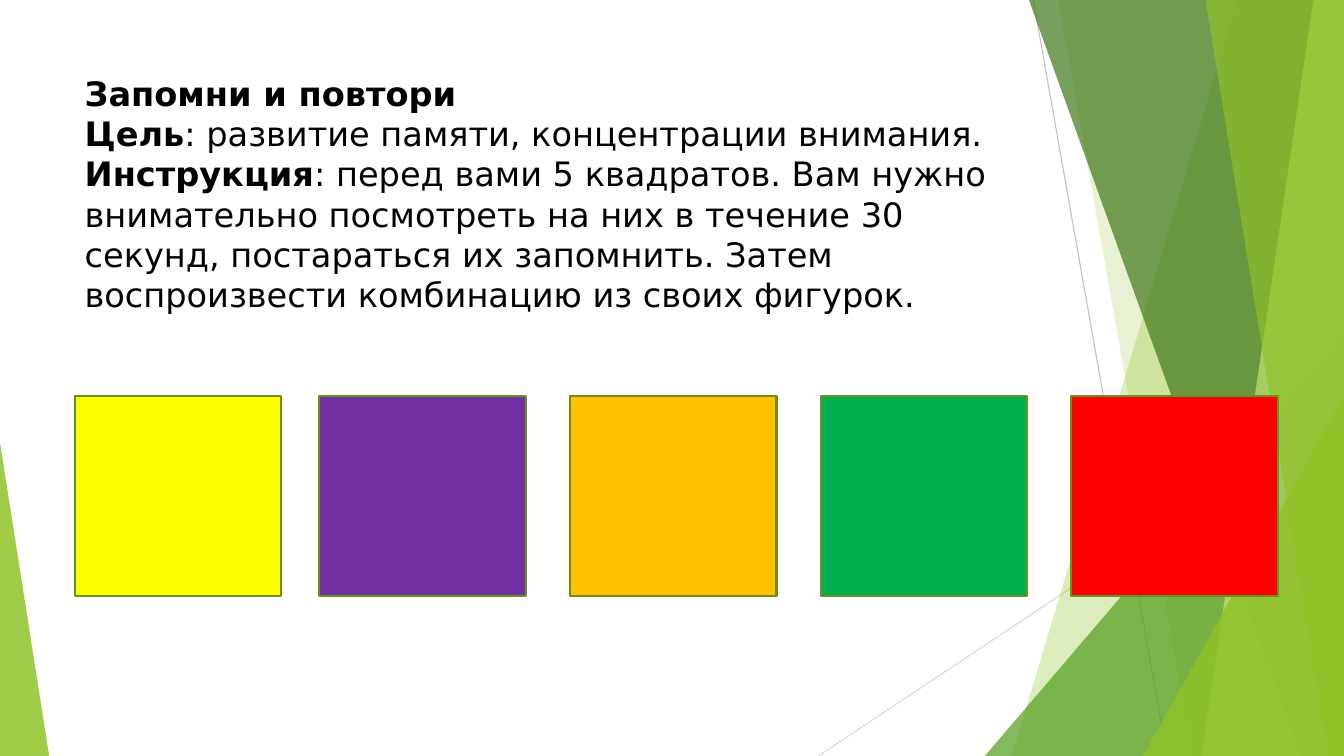
from dataclasses import dataclass

from lxml.etree import SubElement
from pptx import Presentation
from pptx.dml.color import RGBColor
from pptx.enum.shapes import MSO_CONNECTOR, MSO_SHAPE
from pptx.enum.text import MSO_ANCHOR, PP_ALIGN
from pptx.oxml.ns import qn
from pptx.util import Cm, Pt


@dataclass(frozen=True)
class Theme:
    font: str = "DejaVu Sans"
    title_size: int = 24
    text: str = "000000"
    lime: str = "90C226"
    leaf: str = "54A021"
    forest: str = "3F7819"
    pale: str = "C0E474"
    ray_dark: str = "BFBFBF"
    ray_light: str = "D9D9D9"
    ray_width: float = 0.75
    outline: str = "6B901C"
    outline_width: float = 1.5


THEME = Theme()
SLIDE_W, SLIDE_H = 33.87, 19.05

TASK = [
    [("Запомни и повтори", True)],
    [("Цель", True), (": развитие памяти, концентрации внимания.", False)],
    [("Инструкция", True),
     (": перед вами 5 квадратов. Вам нужно внимательно посмотреть на них "
      "в течение 30 секунд, постараться их запомнить. Затем воспроизвести "
      "комбинацию из своих фигурок.", False)],
]
TASK_BOX = (1.88, 1.7, 23.88, 3.66)

SQUARE_COLORS = ["FFFF00", "7030A0", "FFC000", "00B050", "FF0000"]
SQUARE_W, SQUARE_H, SQUARE_TOP = 5.21, 5.03, 9.98
SQUARE_STEP, LAST_SQUARE_LEFT, LEFT_MARGIN = 6.32, 27, 1.88

RAYS = [
    ((26.04, 0), (29.41, SLIDE_H), THEME.ray_dark),
    ((SLIDE_W, 10.24), (20.62, SLIDE_H), THEME.ray_light),
]
FACETS = [
    ("ribbon", (31.19, 25.5), THEME.lime, 30),
    ("ribbon", (26.67, 30.05), THEME.lime, 20),
    ("triangle", (24.82, 8.46, SLIDE_W, 1), THEME.leaf, 72),
    ("ribbon", (25.93, 32.79), THEME.forest, 70),
    ("ribbon", (33.1, 30.28), THEME.pale, 70),
    ("ribbon", (30.38, 33.48), THEME.lime, 65),
    ("triangle", (28.8, 9.98, SLIDE_W, 1), THEME.lime, 80),
    ("triangle", (0, 11.15, 1.24, 0), THEME.lime, 85),
]


def paint(shape, color, opacity=100):
    shape.shadow.inherit = False
    shape.fill.solid()
    shape.fill.fore_color.rgb = RGBColor.from_string(color)
    if opacity < 100:
        tint = shape.element.spPr.find(qn("a:solidFill"))[0]
        SubElement(tint, qn("a:alpha"), val=str(opacity * 1000))
    shape.line.fill.background()


def add_ray(shapes, start, end, color):
    ray = shapes.add_connector(
        MSO_CONNECTOR.STRAIGHT, *map(Cm, start + end))
    ray.line.color.rgb = RGBColor.from_string(color)
    ray.line.width = Pt(THEME.ray_width)
    SubElement(ray.element.spPr, qn("a:effectLst"))


def add_ribbon(shapes, top_x, bottom_x):
    outline = shapes.build_freeform(Cm(top_x), 0)
    corners = [(SLIDE_W, 0), (SLIDE_W, SLIDE_H), (bottom_x, SLIDE_H)]
    outline.add_line_segments([(Cm(x), Cm(y)) for x, y in corners])
    return outline.convert_to_shape()


def add_triangle(shapes, left, top, right, apex):
    triangle = shapes.add_shape(
        MSO_SHAPE.ISOSCELES_TRIANGLE,
        Cm(left), Cm(top), Cm(right - left), Cm(SLIDE_H - top))
    triangle.adjustments[0] = apex
    return triangle


def write(paragraph, text, *, bold, size, color, font):
    run = paragraph.add_run()
    run.text = text
    run.font.bold = bold
    run.font.size = Pt(size)
    run.font.name = font
    run.font.color.rgb = RGBColor.from_string(color)


def fill_title(title):
    title.left, title.top, title.width, title.height = map(Cm, TASK_BOX)
    frame = title.text_frame
    frame.word_wrap = True
    frame.vertical_anchor = MSO_ANCHOR.TOP
    paragraph = frame.paragraphs[0]
    paragraph.alignment = PP_ALIGN.LEFT
    for index, line in enumerate(TASK):
        if index:
            paragraph.add_line_break()
        for text, bold in line:
            write(paragraph, text, bold=bold, size=THEME.title_size,
                  color=THEME.text, font=THEME.font)


def add_squares(shapes):
    for index, color in enumerate(SQUARE_COLORS):
        steps_back = len(SQUARE_COLORS) - 1 - index
        left = max(LEFT_MARGIN, LAST_SQUARE_LEFT - steps_back * SQUARE_STEP)
        square = shapes.add_shape(
            MSO_SHAPE.RECTANGLE,
            Cm(left), Cm(SQUARE_TOP), Cm(SQUARE_W), Cm(SQUARE_H))
        paint(square, color)
        square.line.color.rgb = RGBColor.from_string(THEME.outline)
        square.line.width = Pt(THEME.outline_width)


def main():
    deck = Presentation()
    deck.slide_width, deck.slide_height = Cm(SLIDE_W), Cm(SLIDE_H)
    slide = deck.slides.add_slide(deck.slide_layouts[5])
    shapes = slide.shapes
    title = shapes.title

    for start, end, color in RAYS:
        add_ray(shapes, start, end, color)
    builders = {"ribbon": add_ribbon, "triangle": add_triangle}
    for kind, geometry, color, opacity in FACETS:
        paint(builders[kind](shapes, *geometry), color, opacity)

    title.element.getparent().append(title.element)
    fill_title(title)
    add_squares(shapes)
    deck.save("out.pptx")


if __name__ == "__main__":
    main()
